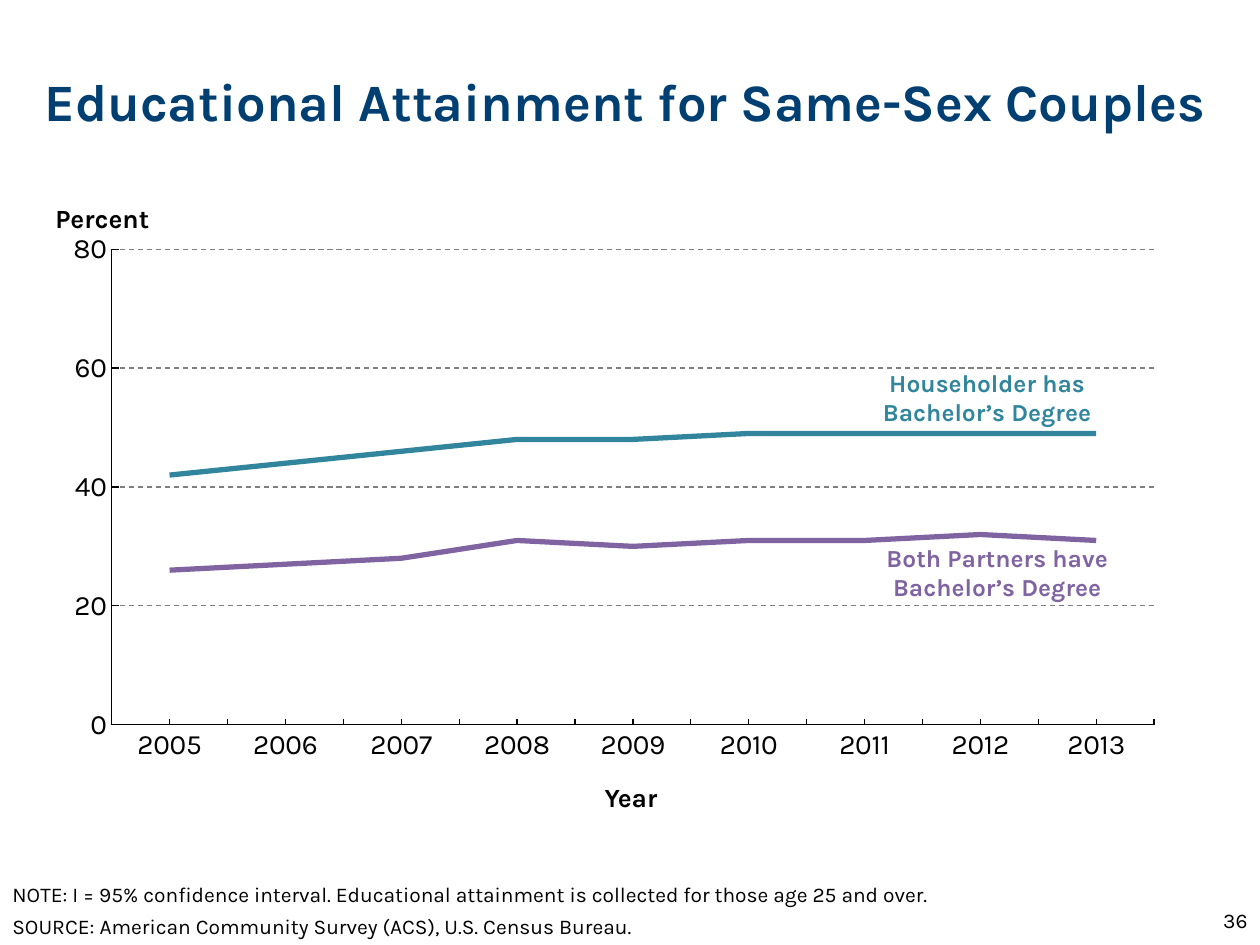
from lxml.etree import SubElement as Sub
from pptx import Presentation
from pptx.chart.data import CategoryChartData
from pptx.dml.color import RGBColor
from pptx.enum.chart import XL_CHART_TYPE as Kind, XL_TICK_MARK as Tick
from pptx.enum.dml import MSO_LINE as Dash
from pptx.enum.text import MSO_ANCHOR as Anchor, PP_ALIGN as Align
from pptx.oxml.ns import qn
from pptx.util import Inches, Pt

FONT = "Karla"
COLORS = {"navy": "003F72", "black": "000000", "gray": "7F7F7F",
          "teal": "31859C", "purple": "8064A2"}

TITLE = "Educational Attainment for Same-Sex Couples"
YEARS = [str(year) for year in range(2005, 2014)]
SERIES = [
    ("Householder has Bachelor’s Degree", "teal",
     (42, 44, 46, 48, 48, 49, 49, 49, 49)),
    ("Both Partners have Bachelor’s Degree", "purple",
     (26, 27, 28, 31, 30, 31, 31, 32, 31)),
]
PLOT = {"x": 0.067, "y": 0.05, "w": 0.871, "h": 0.826}

# text, box, size, bold, color, alignment, anchor, wrap
LEFT, MID, RIGHT = Align.LEFT, Align.CENTER, Align.RIGHT
TOP, HALF = Anchor.TOP, Anchor.MIDDLE
LABELS = [
    ("SOURCE: American Community Survey (ACS), U.S. Census Bureau.",
     (0, 7.2, 9, 0.3), 12, False, "black", LEFT, TOP, True),
    ("36", (9.33, 7.1, 0.67, 0.4), 12, False, "black", RIGHT, HALF, True),
    ("NOTE: I = 95% confidence interval. Educational attainment is "
     "collected for those age 25 and over.",
     (0, 6.95, 9.75, 0.3), 12, False, "black", LEFT, TOP, True),
    ("Percent", (0.34, 1.56, 1.01, 0.35), 15, True, "black", LEFT, TOP, False),
    (SERIES[0][0], (6.67, 2.87, 2.33, 0.57), 14, True, "teal", MID, TOP, True),
    (SERIES[1][0], (6.75, 4.26, 2.33, 0.57), 14, True, "purple", MID, TOP, True),
    ("Year", (4.7, 6.15, 1.38, 0.35), 15, True, "black", LEFT, TOP, True),
]


def rgb(name):
    return RGBColor.from_string(COLORS[name])


def style(font, size, color="black", bold=False):
    font.name, font.size, font.bold = FONT, Pt(size), bold
    font.color.rgb = rgb(color)


def stroke(line, color, width):
    line.color.rgb = rgb(color)
    line.width = Pt(width)


def fix_plot(chart):
    """Pin the inner plot area to fractions of the chart frame."""
    area = chart.element.find(".//" + qn("c:plotArea"))
    layout = area.find(qn("c:layout"))
    if layout is None:
        layout = Sub(area, qn("c:layout"))
        area.insert(0, layout)
    manual = Sub(layout, qn("c:manualLayout"))
    rules = [("layoutTarget", "inner"), ("xMode", "edge"), ("yMode", "edge")]
    for tag, value in rules + list(PLOT.items()):
        Sub(manual, qn("c:" + tag)).set("val", str(value))


def add_lines(slide):
    data = CategoryChartData(number_format="General")
    data.categories = YEARS
    for name, _, values in SERIES:
        data.add_series(name, values)
    box = [Inches(n) for n in (0.25, 1.75, 9.5, 4.57)]
    chart = slide.shapes.add_chart(Kind.LINE, *box, data).chart
    style(chart.font, 18)
    chart.has_legend = chart.has_title = False
    fix_plot(chart)
    chart.plots[0].vary_by_categories = False
    for line, (_, color, _) in zip(chart.plots[0].series, SERIES):
        line.smooth = False
        stroke(line.format.line, color, 3)

    years, rates = chart.category_axis, chart.value_axis
    for axis in (years, rates):
        style(axis.tick_labels.font, 16)
        stroke(axis.format.line, "black", 0.75)
    years.major_tick_mark, years.minor_tick_mark = Tick.NONE, Tick.INSIDE
    rates.major_tick_mark, rates.minor_tick_mark = Tick.INSIDE, Tick.NONE
    rates.minimum_scale, rates.maximum_scale, rates.major_unit = 0, 80, 20
    rates.tick_labels.number_format = "#,##0"
    rates.tick_labels.number_format_is_linked = False
    grid = rates.major_gridlines.format.line
    stroke(grid, "gray", 0.75)
    grid.dash_style = Dash.DASH


def write(shape, text, size, bold, color, align, anchor, wrap):
    frame = shape.text_frame
    frame.word_wrap, frame.vertical_anchor = wrap, anchor
    para = frame.paragraphs[0]
    para.text, para.alignment = text, align
    style(para.font, size, color, bold)


def main():
    deck = Presentation()
    deck.slide_width, deck.slide_height = Inches(10), Inches(7.5)
    slide = deck.slides.add_slide(deck.slide_layouts[5])
    add_lines(slide)

    title = slide.shapes.title
    title.left, title.top = Inches(0), Inches(0.17)
    title.width, title.height = Inches(9.92), Inches(1.25)
    write(title, TITLE, 30, True, "navy", MID, HALF, True)
    for text, box, *look in LABELS:
        shape = slide.shapes.add_textbox(*[Inches(n) for n in box])
        write(shape, text, *look)
    deck.save("out.pptx")


if __name__ == "__main__":
    main()
